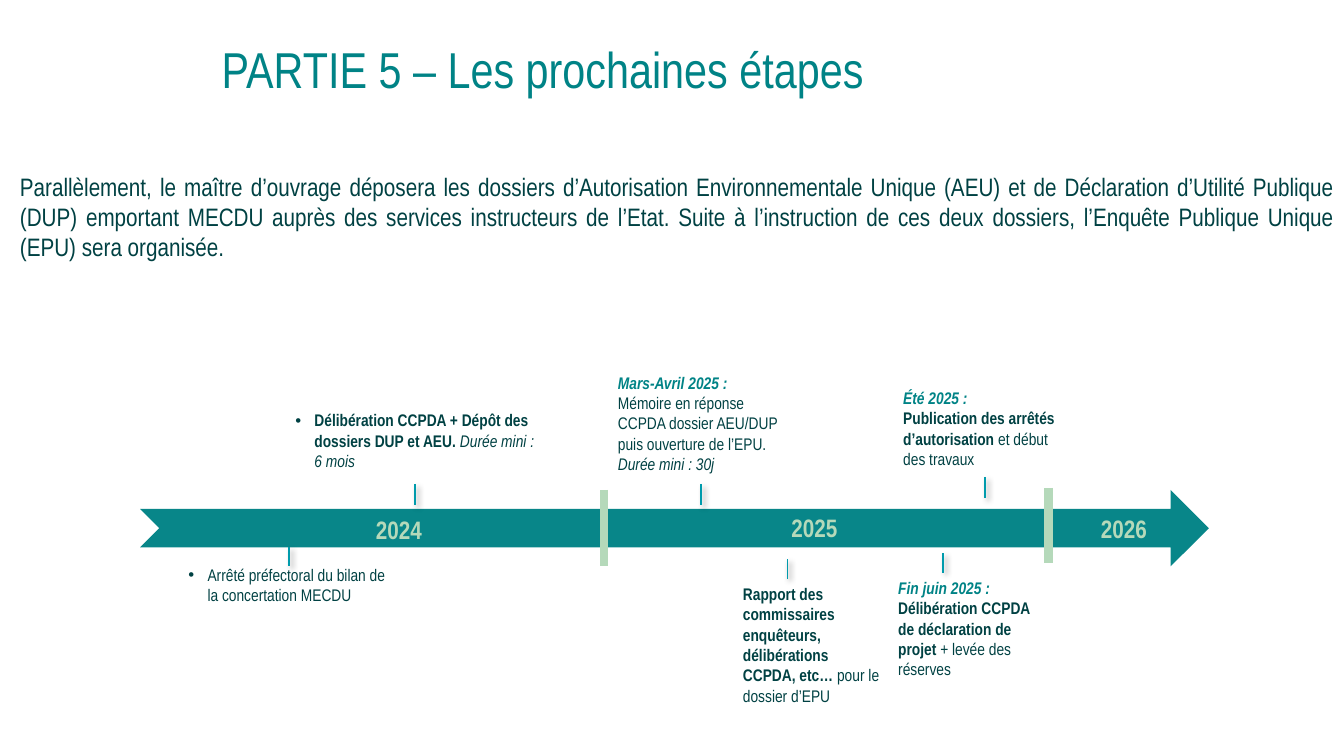
"""Build the timeline slide of the next project steps."""
from dataclasses import dataclass
from typing import Optional

from lxml.etree import SubElement as Sub
from pptx import Presentation
from pptx.dml.color import RGBColor as Rgb
from pptx.enum.shapes import MSO_CONNECTOR as Link, MSO_SHAPE as Form
from pptx.enum.text import MSO_ANCHOR as Anchor, PP_ALIGN as Align
from pptx.oxml.ns import qn
from pptx.slide import Slide
from pptx.util import Inches, Pt


@dataclass(frozen=True)
class Theme:
    """Colours, font and type sizes."""
    teal: str = "008386"
    dark: str = "004143"
    pale: str = "B5D9BA"
    blue: str = "009BAC"
    font: str = "Arial Narrow"
    title: int = 36
    body: int = 18
    note: int = 12


@dataclass(frozen=True)
class Run:
    """A stretch of text in one style."""
    text: str
    bold: bool = False
    slant: bool = False
    tint: str = Theme.dark


@dataclass(frozen=True)
class Box:
    """A text box with its paragraphs."""
    left: float
    top: float
    width: float
    height: float
    paras: list[list[Run]]
    size: int = Theme.note
    space: Optional[float] = None
    align: Align = Align.LEFT
    anchor: Anchor = Anchor.TOP
    dot: bool = False


@dataclass(frozen=True)
class Bar:
    """An upright line on the timeline."""
    x: float
    top: float
    end: float
    tint: str = Theme.blue
    width: float = 1.25
    shade: bool = True


def draw_box(slide: Slide, box: Box) -> None:
    """Draw a text box run by run."""
    shape = slide.shapes.add_textbox(Inches(box.left), Inches(box.top),
                                     Inches(box.width), Inches(box.height))
    frame = shape.text_frame
    frame.word_wrap = True
    frame.vertical_anchor = box.anchor
    for i, runs in enumerate(box.paras):
        para = frame.add_paragraph() if i else frame.paragraphs[0]
        para.alignment = box.align
        if box.space:
            para.line_spacing = box.space if box.space < 2 else Pt(box.space)
        if box.dot:
            props = para._p.get_or_add_pPr()
            props.set("marL", str(Inches(0.19)))
            props.set("indent", str(-Inches(0.19)))
            Sub(props, qn("a:buFont"), typeface="Arial")
            Sub(props, qn("a:buChar"), char="•")
        for item in runs:
            run = para.add_run()
            run.text = item.text
            font = run.font
            font.name, font.size = Theme.font, Pt(box.size)
            font.bold, font.italic = item.bold, item.slant
            font.color.rgb = Rgb.from_string(item.tint)


def draw_bar(slide: Slide, bar: Bar) -> None:
    """Draw an upright line, with or without a shadow."""
    line = slide.shapes.add_connector(Link.STRAIGHT, Inches(bar.x), Inches(bar.top),
                                      Inches(bar.x), Inches(bar.end))
    line.line.color.rgb = Rgb.from_string(bar.tint)
    line.line.width = Pt(bar.width)
    fx = Sub(line._element.spPr, qn("a:effectLst"))
    if bar.shade:
        cast = Sub(fx, qn("a:outerShdw"), blurRad=str(Pt(4)), dist=str(Pt(3)),
                   dir=str(45 * 60000), algn="tl", rotWithShape="0")
        tone = Sub(cast, qn("a:srgbClr"), val="000000")
        Sub(tone, qn("a:alpha"), val="40000")


def draw_arrow(slide: Slide) -> None:
    """Draw the notched arrow of the timeline."""
    arrow = slide.shapes.add_shape(Form.NOTCHED_RIGHT_ARROW, Inches(1.39), Inches(4.86),
                                   Inches(10.6), Inches(0.76))
    arrow.shadow.inherit = False
    arrow.fill.solid()
    arrow.fill.fore_color.rgb = Rgb.from_string(Theme.teal)
    tone = arrow._element.spPr.find(qn("a:solidFill")).find(qn("a:srgbClr"))
    Sub(tone, qn("a:alpha"), val="97000")
    arrow.line.fill.background()


def date(text: str) -> list[Run]:
    """Return a date heading paragraph."""
    return [Run(text, True, True, Theme.teal)]


def year(text: str, left: float, top: float) -> Box:
    """Return the label of a year."""
    return Box(left, top, 0.72, 0.4, [[Run(text, True, tint=Theme.pale)]], Theme.body)


HEADS = [
    Box(2.1, 0.4, 11.45, 0.64, [[Run("PARTIE 5 – Les prochaines étapes", tint=Theme.teal)]],
        Theme.title, 0.9, anchor=Anchor.MIDDLE),
    Box(0.1, 1.65, 13.24, 1.01, [[Run(
        "Parallèlement, le maître d’ouvrage déposera les dossiers d’Autorisation "
        "Environnementale Unique (AEU) et de Déclaration d’Utilité Publique (DUP) "
        "emportant MECDU auprès des services instructeurs de l’Etat. Suite à "
        "l’instruction de ces deux dossiers, l’Enquête Publique Unique (EPU) sera "
        "organisée.")]], Theme.body, align=Align.JUSTIFY),
]

NOTES = [
    Box(1.77, 5.55, 2.2, 0.5,
        [[Run("Arrêté préfectoral du bilan de la concertation MECDU")]], dot=True),
    Box(2.83, 4.02, 2.59, 0.69,
        [[Run("Délibération CCPDA + Dépôt des dossiers DUP et AEU. ", True),
          Run("Durée mini : 6 mois", slant=True)]], space=14.4, dot=True),
    Box(6.03, 3.65, 1.82, 1.1,
        [date("Mars-Avril 2025 :"),
         [Run("Mémoire en réponse CCPDA dossier AEU/DUP puis ouverture de l’EPU. "),
          Run("Durée mini : 30j", slant=True)]], space=14.4),
    Box(7.27, 5.74, 1.59, 1.35,
        [[Run("Rapport des commissaires enquêteurs, délibérations CCPDA, etc… ", True),
          Run("pour le dossier d’EPU")]], space=14.5),
    Box(8.86, 3.8, 1.82, 0.9,
        [date("Été 2025 :"),
         [Run("Publication des arrêtés d’autorisation ", True),
          Run("et début des travaux")]], space=14.4),
    Box(8.81, 5.68, 1.59, 1.14,
        [date("Fin juin 2025 :"),
         [Run("Délibération CCPDA de déclaration de projet", True),
          Run(" + levée des réserves")]], space=14.5),
]

BARS = [
    Bar(2.87, 5.43, 5.62),
    Bar(4.12, 4.8, 5.01),
    Bar(6.95, 4.8, 5.01),
    Bar(7.81, 5.55, 5.74),
    Bar(9.77, 4.73, 4.94),
    Bar(9.35, 5.49, 5.68),
    Bar(5.99, 4.86, 5.62, Theme.pale, 6, False),
    Bar(10.4, 4.84, 5.59, Theme.pale, 6, False),
]

YEARS = [year("2024", 3.63, 5.05), year("2025", 7.75, 5.03), year("2026", 10.82, 5.04)]


def main() -> None:
    """Build and save the slide."""
    deck = Presentation()
    deck.slide_width, deck.slide_height = Inches(13.33), Inches(7.5)
    slide = deck.slides.add_slide(deck.slide_layouts[6])
    draw_arrow(slide)
    for bar in BARS:
        draw_bar(slide, bar)
    for box in HEADS + NOTES + YEARS:
        draw_box(slide, box)
    deck.save("out.pptx")


if __name__ == "__main__":
    main()
